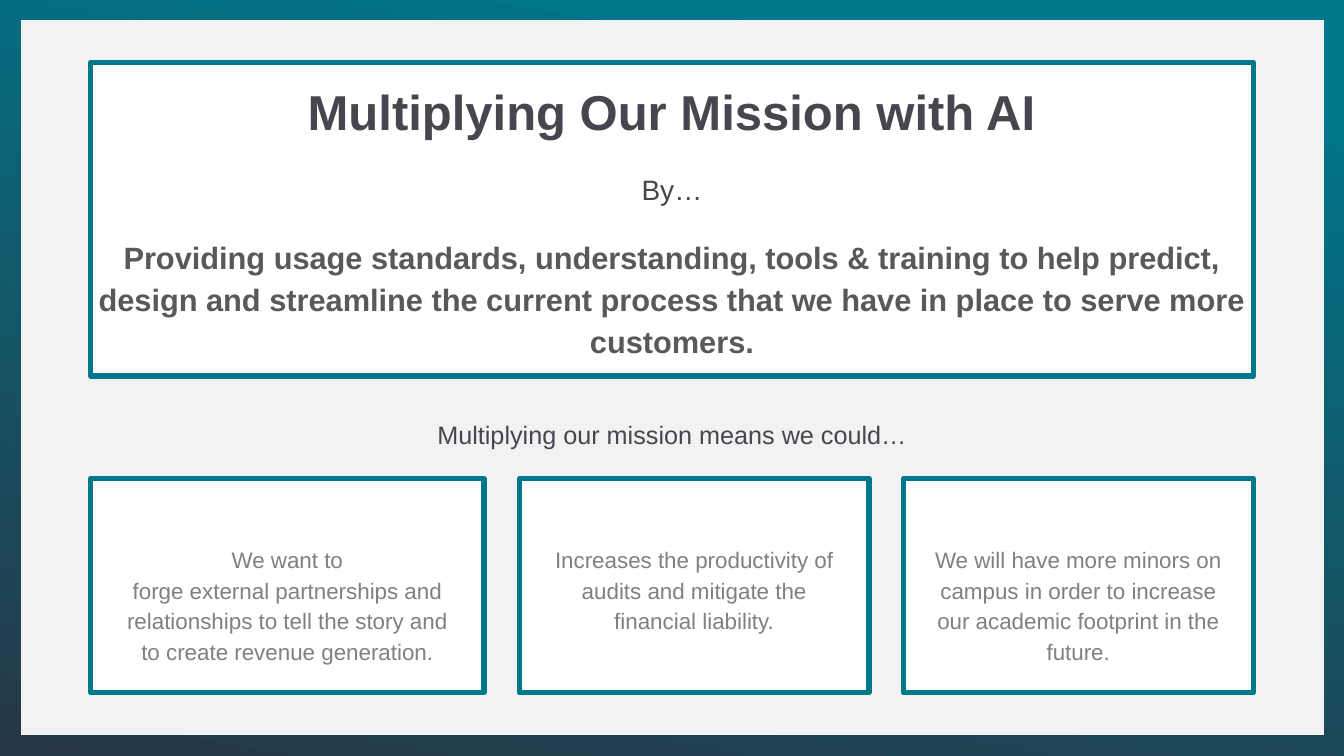
from dataclasses import dataclass

from pptx import Presentation
from pptx.dml.color import RGBColor
from pptx.enum.shapes import MSO_SHAPE
from pptx.enum.text import MSO_ANCHOR, MSO_AUTO_SIZE, PP_ALIGN
from pptx.util import Inches, Pt

RECTANGLE = MSO_SHAPE.RECTANGLE
TOP, MIDDLE = MSO_ANCHOR.TOP, MSO_ANCHOR.MIDDLE
CENTER = PP_ALIGN.CENTER
NO_AUTOFIT = MSO_AUTO_SIZE.NONE
TITLE_ONLY = 5


@dataclass(frozen=True)
class Theme:
    font: str = "Arial"
    navy: str = "253746"
    teal: str = "00778B"
    page: str = "F2F2F2"
    white: str = "FFFFFF"
    heading: str = "47464E"
    statement: str = "595959"
    muted: str = "808080"
    title_size: int = 35
    statement_size: int = 22
    lead_size: int = 20
    label_size: int = 18
    card_size: int = 16
    border: float = 3.75
    spacing: float = 1.14


def write(paragraph, text, *, font, size, color, bold=False, spacing=1.0, before=0):
    """Fill a centred paragraph with formatted text."""
    paragraph.text = text
    paragraph.alignment = CENTER
    paragraph.line_spacing = spacing
    paragraph.space_before = Pt(before)
    paragraph.space_after = Pt(0)
    for run in paragraph.runs:
        run.font.name = font
        run.font.size = Pt(size)
        run.font.bold = bold
        run.font.color.rgb = RGBColor.from_string(color)


class SlideBuilder:
    def __init__(self, slide, theme):
        self.slide = slide
        self.theme = theme

    def background(self):
        fill = self.slide.background.fill
        fill.gradient()
        fill.gradient_angle = 80
        stops = zip(fill.gradient_stops, (self.theme.navy, self.theme.teal), (0, 0.9))
        for stop, color, position in stops:
            stop.color.rgb = RGBColor.from_string(color)
            stop.position = position

    def rectangle(self, left, top, width, height, fill, line=None):
        shape = self.slide.shapes.add_shape(
            RECTANGLE, Inches(left), Inches(top), Inches(width), Inches(height))
        shape.shadow.inherit = False
        shape.fill.solid()
        shape.fill.fore_color.rgb = RGBColor.from_string(fill)
        if line:
            shape.line.color.rgb = RGBColor.from_string(line)
            shape.line.width = Pt(self.theme.border)
        else:
            shape.line.fill.background()
        return shape

    def fill_text(self, shape, paragraphs, side=0.0, top=0.0, anchor=TOP):
        frame = shape.text_frame
        frame.word_wrap = True
        frame.auto_size = NO_AUTOFIT
        frame.vertical_anchor = anchor
        frame.margin_left = frame.margin_right = Inches(side)
        frame.margin_top, frame.margin_bottom = Inches(top), Inches(0)
        for index, (text, style) in enumerate(paragraphs):
            paragraph = frame.add_paragraph() if index else frame.paragraphs[0]
            write(paragraph, text, font=self.theme.font, **style)

    def framed_text(self, left, top, width, height, paragraphs, side, inset):
        shape = self.rectangle(left, top, width, height, self.theme.white, self.theme.teal)
        self.fill_text(shape, paragraphs, side, inset)

    def title(self, text, left, top, width, height):
        title = self.slide.shapes.title
        title.left, title.top = Inches(left), Inches(top)
        title.width, title.height = Inches(width), Inches(height)
        style = dict(size=self.theme.title_size, color=self.theme.heading, bold=True)
        self.fill_text(title, [(text, style)], anchor=MIDDLE)
        # Bring the title in front of the panel
        title.element.getparent().append(title.element)

    def label(self, text, left, top, width, height):
        box = self.slide.shapes.add_textbox(
            Inches(left), Inches(top), Inches(width), Inches(height))
        style = dict(size=self.theme.label_size, color=self.theme.heading, spacing=1.5)
        self.fill_text(box, [(text, style)])


def main():
    theme = Theme()
    presentation = Presentation()
    presentation.slide_width, presentation.slide_height = Inches(13.33), Inches(7.5)
    slide = presentation.slides.add_slide(presentation.slide_layouts[TITLE_ONLY])
    builder = SlideBuilder(slide, theme)

    # Gradient border and page
    builder.background()
    builder.rectangle(0.21, 0.2, 12.92, 7.09, theme.page)

    # Mission panel
    lead = dict(size=theme.lead_size, color=theme.heading, spacing=theme.spacing)
    statement = dict(size=theme.statement_size, color=theme.statement, bold=True,
                     spacing=theme.spacing, before=20)
    builder.framed_text(0.9, 0.62, 11.53, 3.11, [
        ("By…", lead),
        ("Providing usage standards, understanding, tools & training to help predict, "
         "design and streamline the current process that we have in place to serve more "
         "customers.", statement),
    ], side=0.03, inset=1.04)
    builder.title("Multiplying Our Mission with AI", 0.9, 0.82, 11.53, 0.56)

    # Outcome cards
    builder.label("Multiplying our mission means we could…", 1.52, 4.01, 10.29, 0.4)
    card_style = dict(size=theme.card_size, color=theme.muted, spacing=theme.spacing)
    cards = [
        (0.9, 3.9, "We want to\vforge external partnerships and relationships to tell "
                   "the story and to create revenue generation."),
        (5.15, 3.47, "Increases the productivity of audits and mitigate the "
                     "financial liability."),
        (8.96, 3.47, "We will have more minors on campus in order to increase our "
                     "academic footprint in the future."),
    ]
    for left, width, text in cards:
        builder.framed_text(left, 4.75, width, 2.12, [(text, card_style)],
                            side=0.3, inset=0.63)

    presentation.save("out.pptx")


if __name__ == "__main__":
    main()
